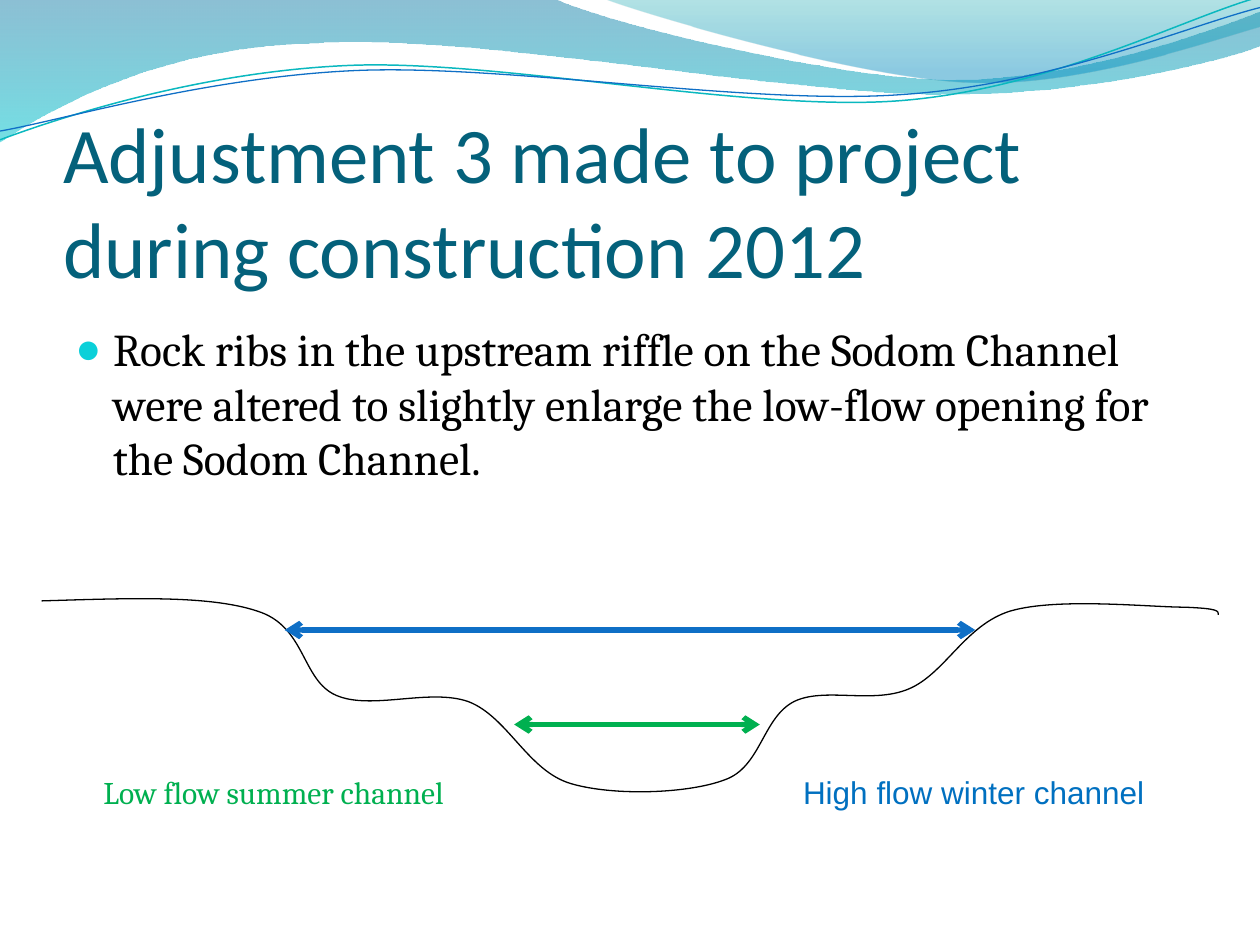
import math
import pptx
import pptx.util
import pptx.dml.color
import pptx.enum.shapes
import pptx.enum.text
import pptx.oxml.ns
from lxml import etree

Pt = pptx.util.Pt
qn = pptx.oxml.ns.qn

CREST = [(0, 0), (316.8, -0.7),
         (342.7, 12.2, 478.1, 45.4, 545.8, 45.4),
         (614.2, 45.4, 689.8, 18.7, 720, 6.5), (720.7, 25.9),
         (707.8, 31.7, 626.4, 54.7, 537.1, 54),
         (447.8, 54, 275, 20.2, 185, 24.5),
         (92.9, 25.9, 33.1, 59.8, -0.7, 81.4), (0, 0)]
SWELL = [(344.9, -0.7),
         (366.5, 7.9, 491, 44.6, 553.7, 46.8),
         (616.3, 49.7, 691.9, 23, 720, 15.1), (720, 0), (344.9, -0.7)]
TEAL = [(0, 79.9),
        (34.6, 67, 113.8, 41, 199.4, 37.4),
        (284.4, 33.8, 427, 64.1, 513.4, 57.6),
        (599.8, 51.1, 675.4, 10.8, 718.6, -1.4)]
BLUE = [(0, 74.9),
        (33.8, 69.1, 118.1, 43.9, 203.8, 40.3),
        (290.2, 36.7, 429.8, 60.5, 516.2, 54),
        (601.9, 48.2, 677.5, 15.1, 720, 4.3)]
BED = [(23.8, 343.4),
       (71.3, 342, 118.8, 339.8, 146.9, 349.2),
       (175, 357.8, 172.1, 388.8, 192.2, 397.4),
       (212.4, 406.1, 245.5, 393.1, 267.8, 401),
       (290.2, 409.7, 301.7, 440.6, 326.2, 447.8),
       (350.6, 455, 393.1, 453.6, 414, 445.7),
       (434.9, 438.5, 435.6, 410.4, 453.6, 401),
       (470.9, 392.4, 498.2, 402.5, 519.1, 393.8),
       (540, 385.2, 551.5, 357.1, 577.4, 349.2),
       (604.1, 341.3, 657.4, 347, 676.8, 347),
       (697, 347.8, 696.2, 349.2, 696.2, 351.4)]


def paint(color, tone):
    color.rgb = pptx.dml.color.RGBColor.from_string(tone)


def apply(item, values):
    for name, value in values.items():
        setattr(item, name, value)


def child(parent, tag, **values):
    return etree.SubElement(parent, qn(tag), **values)


def place(shape, area):
    apply(shape, dict(zip(("left", "top", "width", "height"), map(Pt, area))))


def local(x, y, area, turn):
    left, top, width, height = area
    dx, dy = x - left - width / 2, y - top - height / 2
    cos, sin = math.cos(math.radians(turn)), math.sin(math.radians(turn))
    return (Pt(dx * cos + dy * sin + width / 2),
            Pt(dy * cos - dx * sin + height / 2))


def curve(slide, route, area, close=False, turn=0):
    ends = [(Pt(part[-2]), Pt(part[-1])) for part in route]
    pen = slide.shapes.build_freeform(*ends[0])
    pen.add_line_segments(ends[1:], close=close)
    shape = pen.convert_to_shape()
    place(shape, area)
    shape.rotation = turn
    shape.shadow.inherit = False
    track = next(shape._element.iter(qn("a:path")))
    apply(track, {"w": Pt(area[2]), "h": Pt(area[3])})
    for old in list(track):
        track.remove(old)
    for spot, part in enumerate(route):
        tag = "a:cubicBezTo" if len(part) == 6 else "a:lnTo"
        node = child(track, tag if spot else "a:moveTo")
        for x, y in zip(part[::2], part[1::2]):
            px, py = local(x, y, area, turn)
            child(node, "a:pt", x=str(int(px)), y=str(int(py)))
    if close:
        child(track, "a:close")
    return shape


def wave(slide, route, area, stops):
    shape = curve(slide, route, area, close=True)
    shape.line.fill.background()
    shape.fill.gradient()
    shape.fill.gradient_angle = 270
    for stop, (spot, tone, alpha) in zip(shape.fill.gradient_stops, stops):
        stop.position = spot
        paint(stop.color, tone)
    tones = list(shape._element.spPr.iter(qn("a:srgbClr")))
    for node, (spot, tone, alpha) in zip(tones, stops):
        child(node, "a:alpha", val=str(alpha * 1000))


def stroke(slide, route, area, tone, width, turn=0):
    shape = curve(slide, route, area, turn=turn)
    shape.fill.background()
    paint(shape.line.color, tone)
    shape.line.width = Pt(width)


def arrow(slide, left, right, y, tone):
    kind = pptx.enum.shapes.MSO_CONNECTOR.STRAIGHT
    link = slide.shapes.add_connector(kind, Pt(left), Pt(y), Pt(right), Pt(y))
    paint(link.line.color, tone)
    link.line.width = Pt(3)
    line = link.line._get_or_add_ln()
    for tag in ("a:headEnd", "a:tailEnd"):
        child(line, tag, type="arrow")
    child(link._element.spPr, "a:effectLst")


def write(shape, text, face, size, tone):
    run = shape.text_frame.paragraphs[0].add_run()
    run.text = text
    apply(run.font, {"name": face, "size": Pt(size)})
    paint(run.font.color, tone)


def box(slide, area, wrap):
    shape = slide.shapes.add_textbox(*map(Pt, area))
    shape.text_frame.word_wrap = wrap
    return shape


def head(slide, text):
    title = slide.shapes.title
    slide.shapes._spTree.append(title._element)
    place(title, (36, 78.1, 648, 90))
    apply(title.text_frame, {
        "margin_left": 0, "margin_right": 0, "margin_bottom": 0,
        "margin_top": Pt(3.6), "word_wrap": True,
        "auto_size": pptx.enum.text.MSO_AUTO_SIZE.NONE,
        "vertical_anchor": pptx.enum.text.MSO_ANCHOR.BOTTOM})
    write(title, text, "Calibri", 45, "04617B")
    title.text_frame.paragraphs[0].alignment = pptx.enum.text.PP_ALIGN.LEFT


def bullet(para, tone):
    props = para._p.get_or_add_pPr()
    props.set("marL", str(int(Pt(21.6))))
    props.set("indent", str(-int(Pt(21.6))))
    child(child(props, "a:buClr"), "a:srgbClr", val=tone)
    child(props, "a:buSzPct", val="95000")
    child(props, "a:buFont", typeface="Arial")
    child(props, "a:buChar", char="●")


def main():
    deck = pptx.Presentation()
    apply(deck, {"slide_width": Pt(720), "slide_height": Pt(540)})
    slide = deck.slides.add_slide(deck.slide_layouts[5])
    wave(slide, CREST, (-0.7, -0.7, 721.4, 82.1),
         [(0, "0074A1", 45), (1, "00C6CF", 55)])
    wave(slide, SWELL, (344.9, -0.7, 375.1, 50.4),
         [(0, "00A1A9", 30), (0.8, "008BBF", 45)])
    stroke(slide, TEAL, (-1.4, 15.8, 721.4, 51.1), "0AB8BF", 0.85, 357.3)
    stroke(slide, BLUE, (-1.4, 21.6, 722.2, 41.8), "0F6FC6", 0.75, 357.3)
    head(slide, "Adjustment 3 made to project during construction 2012")
    body = box(slide, (36, 180, 648, 318), True)
    bullet(body.text_frame.paragraphs[0], "0BD0D9")
    write(body, "Rock ribs in the upstream riffle on the Sodom Channel were "
          "altered to slightly enlarge the low-flow opening for the Sodom "
          "Channel.", "Cambria", 26, "000000")
    stroke(slide, BED, (23.8, 342, 671.8, 110.9), "000000", 0.75)
    arrow(slide, 162.7, 557.3, 360, "0F6FC6")
    arrow(slide, 293.8, 434.2, 414, "00B050")
    for text, left, width, face, tone in (
            ("Low flow summer channel", 52, 221, "Cambria", "00B050"),
            ("High flow winter channel", 451.8, 211.7, "Arial", "0070C0")):
        label = box(slide, (left, 438.2, width, 28.8), False)
        write(label, text, face, 18, tone)
    deck.save("out.pptx")


if __name__ == "__main__":
    main()
